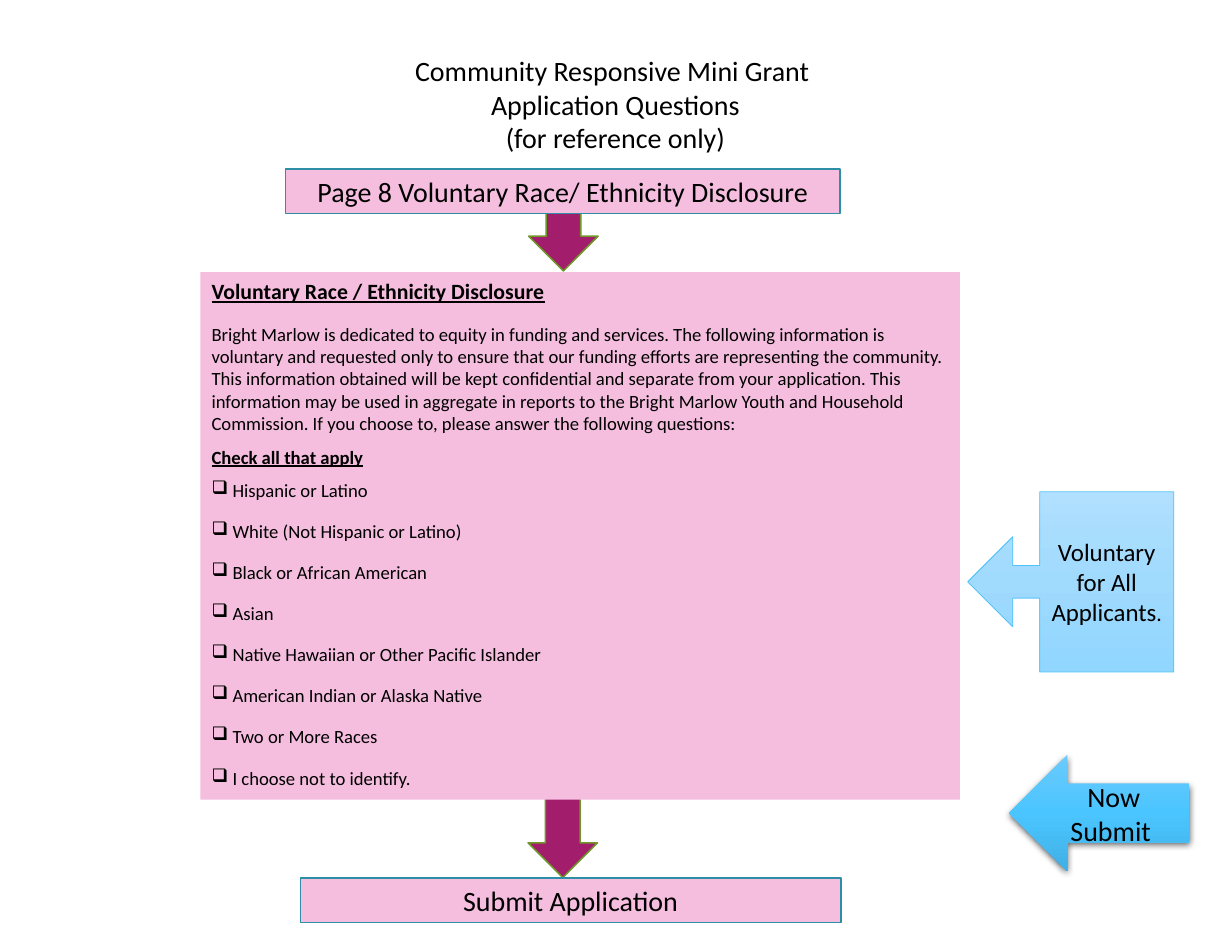
from copy import deepcopy

from lxml import etree
from pptx import Presentation
from pptx.dml.color import RGBColor
from pptx.enum import shapes, text
from pptx.oxml import ns
from pptx.util import Pt

PINK, MAGENTA, GREEN, TEAL = "F5BEDF", "A31D6D", "719629", "2E8EA8"
LEFT, CENTER = text.PP_ALIGN.LEFT, text.PP_ALIGN.CENTER
TOP, MIDDLE = text.MSO_ANCHOR.TOP, text.MSO_ANCHOR.MIDDLE
FORM = shapes.MSO_SHAPE

presentation = Presentation()
presentation.slide_width, presentation.slide_height = Pt(792), Pt(612)
slide = presentation.slides.add_slide(presentation.slide_layouts[5])


def add_block(form, box, fill, line=None, line_width=1.0):
    """Add a preset shape; a list of colours as fill makes a vertical gradient."""
    shape = slide.shapes.add_shape(form, *[Pt(length) for length in box])
    shape.shadow.inherit = False
    if isinstance(fill, list):
        shape.fill.gradient()
        shape.fill.gradient_angle = 270
        stops = shape.element.spPr.find(".//" + ns.qn("a:gsLst"))
        stops.insert(1, deepcopy(stops[0]))
        for index, stop in enumerate(shape.fill.gradient_stops):
            stop.color.rgb = RGBColor.from_string(fill[index])
            stop.position = index / 2
    else:
        shape.fill.solid()
        shape.fill.fore_color.rgb = RGBColor.from_string(fill)
    if line:
        shape.line.color.rgb = RGBColor.from_string(line)
        shape.line.width = Pt(line_width)
    else:
        shape.line.fill.background()
    return shape


def write(shape, words, size=18, bold=False, align=CENTER, space=0, anchor=TOP, bullet=None):
    """Write one paragraph, after any that the shape already holds."""
    frame = shape.text_frame
    frame.word_wrap, frame.vertical_anchor = True, anchor
    paragraph = frame.add_paragraph() if frame.text else frame.paragraphs[0]
    paragraph.alignment = align
    paragraph.space_before = paragraph.space_after = Pt(space)
    run = paragraph.add_run()
    run.text = words
    run.font.name, run.font.size = "Calibri", Pt(size)
    run.font.bold = run.font.underline = bold
    run.font.color.rgb = RGBColor.from_string("000000")
    if bullet:
        properties = paragraph._p.get_or_add_pPr()
        properties.set("marL", str(Pt(13.5)))
        properties.set("indent", str(-Pt(13.5)))
        etree.SubElement(properties, ns.qn("a:buChar")).set("char", bullet)
    return paragraph


# Title
title = slide.shapes.title
title.left, title.top, title.width, title.height = Pt(217.44), Pt(30.96), Pt(356.4), Pt(72.72)
title.text_frame.auto_size = text.MSO_AUTO_SIZE.NONE
for words in ["Community Responsive Mini Grant ", "Application Questions", "(for reference only)"]:
    write(title, words)

# Arrows down the flow
for box in [(316.8, 496.8, 90, 44.64), (338.4, 128.16, 47.52, 44.64)]:
    arrow = add_block(FORM.RIGHT_ARROW, box, MAGENTA, GREEN)
    arrow.rotation = 90

# First and last step
for words, box in [
    ("Page 8 Voluntary Race/ Ethnicity Disclosure", (183.6, 108.72, 356.4, 28.8)),
    ("Submit Application", (192.96, 564.48, 347.76, 28.8)),
]:
    step = add_block(FORM.RECTANGLE, box, PINK, TEAL, 0.75)
    write(step, words, space=6)

# Disclosure form
form = add_block(FORM.RECTANGLE, (128.88, 174.96, 488.16, 339.12), PINK)
write(form, "Voluntary Race / Ethnicity Disclosure", size=14, bold=True, align=LEFT, space=6)
write(
    form,
    "Bright Marlow is dedicated to equity in funding and services. The following information is "
    "voluntary and requested only to ensure that our funding efforts are representing the community. "
    "This information obtained will be kept confidential and separate from your application. This "
    "information may be used in aggregate in reports to the Bright Marlow Youth and Household "
    "Commission. If you choose to, please answer the following questions:",
    size=12, align=LEFT, space=6,
)
write(form, "Check all that apply", size=12, bold=True, align=LEFT, space=1)
for choice in [
    "Hispanic or Latino",
    "White (Not Hispanic or Latino)",
    "Black or African American",
    "Asian",
    "Native Hawaiian or Other Pacific Islander",
    "American Indian or Alaska Native",
    "Two or More Races",
    "I choose not to identify.",
]:
    write(form, choice, size=12, align=LEFT, space=6, bullet="❑")

# Callout beside the form
callout = add_block(FORM.LEFT_ARROW_CALLOUT, (622.08, 316.08, 132.48, 115.92),
                    ["B0E0FE", "A0DAFD", "90D6FF"], "51C3F9", 0.5)
for index, value in enumerate([0.18, 0.25, 0.25, 0.65]):
    callout.adjustments[index] = value
paragraph = write(callout, "Voluntary for All Applicants", size=16, anchor=MIDDLE)
period = paragraph.add_run()
period.text = ". "
period.font.name, period.font.size = "Calibri", Pt(14)
period.font.color.rgb = RGBColor.from_string("000000")

# Submit arrow with a soft shadow
submit = add_block(FORM.LEFT_ARROW, (648.72, 485.28, 115.92, 74.88), ["6BCAFC", "4BC5FF", "40B0E5"])
for words in ["Now", "Submit "]:
    write(submit, words, anchor=MIDDLE)
effects = submit.element.spPr.find(ns.qn("a:effectLst"))
shadow = etree.SubElement(effects, ns.qn("a:outerShdw"), blurRad=str(Pt(4.5)), dist=str(Pt(1.5)),
                          dir="5400000", algn="ctr", rotWithShape="0")
shade = etree.SubElement(shadow, ns.qn("a:srgbClr"), val="000000")
etree.SubElement(shade, ns.qn("a:alpha"), val="63000")

presentation.save("out.pptx")
